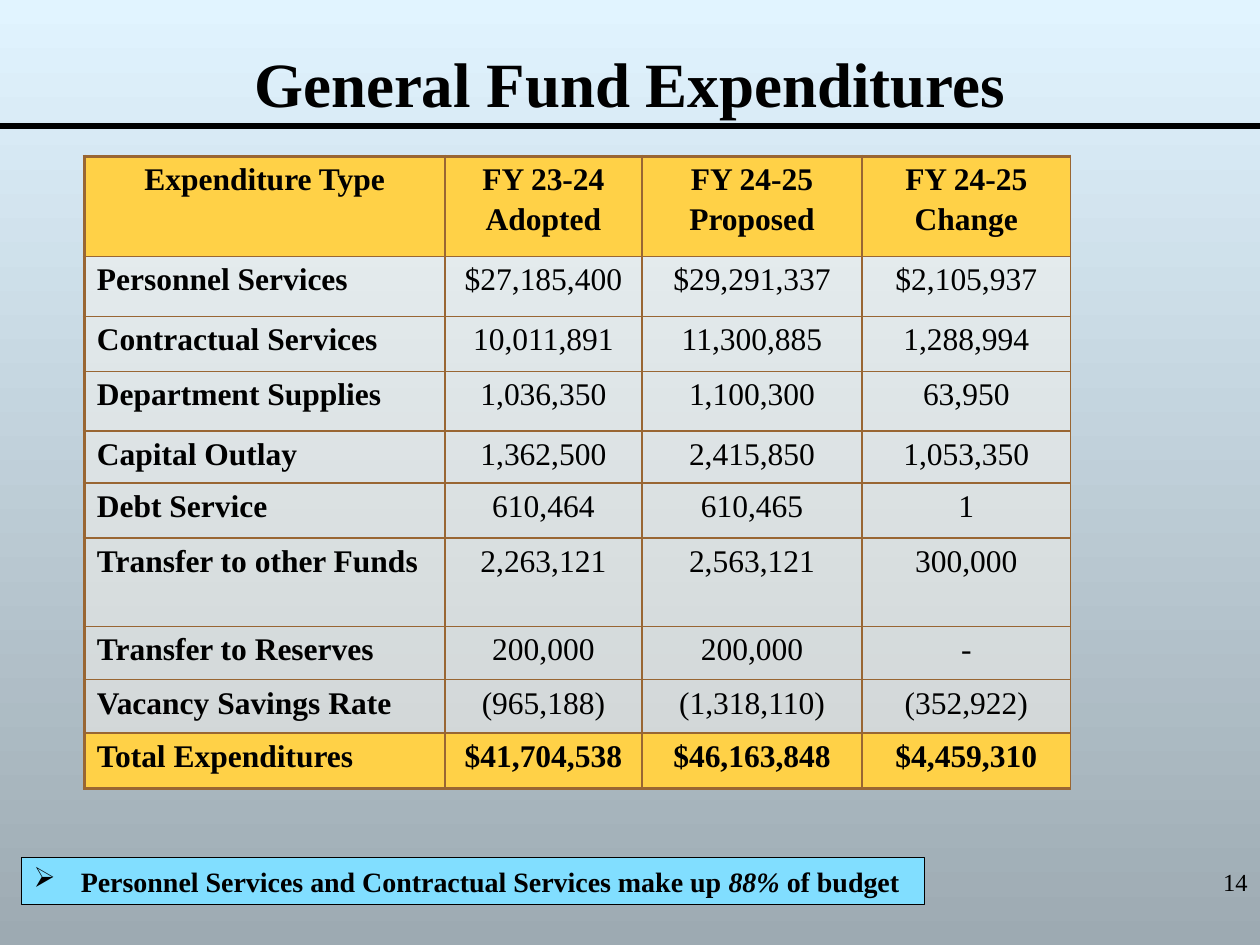
from lxml import etree
from pptx import Presentation
from pptx.dml.color import RGBColor
from pptx.enum import shapes, text
from pptx.oxml import ns
from pptx.util import Cm, Pt

# Content
TITLE = "General Fund Expenditures"
ROWS = [
    ("Expenditure Type", "FY 23-24\nAdopted", "FY 24-25\nProposed", "FY 24-25\nChange"),
    ("Personnel Services", "$27,185,400", "$29,291,337", "$2,105,937"),
    ("Contractual Services", "10,011,891", "11,300,885", "1,288,994"),
    ("Department Supplies", "1,036,350", "1,100,300", "63,950"),
    ("Capital Outlay", "1,362,500", "2,415,850", "1,053,350"),
    ("Debt Service", "610,464", "610,465", "1"),
    ("Transfer to other Funds", "2,263,121", "2,563,121", "300,000"),
    ("Transfer to Reserves", "200,000", "200,000", "-"),
    ("Vacancy Savings Rate", "(965,188)", "(1,318,110)", "(352,922)"),
    ("Total Expenditures", "$41,704,538", "$46,163,848", "$4,459,310"),
]
NOTE = [  # text, italic
    ("Personnel Services and Contractual Services make up ", False),
    ("88% ", True),
    ("of budget", False),
]
PAGE = "14"

# Layout in centimetres
COL_WIDTHS = [7.27, 3.97, 4.44, 4.2]
ROW_HEIGHTS = [2.02, 1.21, 1.11, 1.2, 1.05, 1.11, 1.78, 1.07, 1.08, 1.12]
RULE_Y = 2.54

FONT = "Times New Roman"
BLACK = RGBColor(0x00, 0x00, 0x00)
SKY = RGBColor(0xE1, 0xF4, 0xFF)
SLATE = RGBColor(0x9D, 0xAA, 0xB2)
GOLD = RGBColor(0xFF, 0xD1, 0x47)
CREAM = RGBColor(0xF9, 0xF5, 0xEF)
BROWN = RGBColor(0x99, 0x66, 0x33)
AQUA = RGBColor(0x81, 0xDE, 0xFF)


def format_run(r, size, bold=False, italic=False):
    r.font.name = FONT
    r.font.size = Pt(size)
    r.font.bold = bold
    r.font.italic = italic
    r.font.color.rgb = BLACK


def add_borders(cell, widths):
    """Put left, right, top and bottom lines, in that order, before the fill."""
    tc_pr = cell._tc.get_or_add_tcPr()
    for i, (side, width) in enumerate(zip(("lnL", "lnR", "lnT", "lnB"), widths)):
        ln = etree.Element(ns.qn("a:" + side), w=str(Pt(width)))
        fill = etree.SubElement(ln, ns.qn("a:solidFill"))
        etree.SubElement(fill, ns.qn("a:srgbClr"), val=str(BROWN))
        tc_pr.insert(i, ln)


def fill_cell(cell, value, row, col):
    last = len(ROWS) - 1
    accent = row in (0, last)
    cell.fill.solid()
    cell.fill.fore_color.rgb = GOLD if accent else CREAM
    if not accent:
        clr = cell._tc.tcPr.find(".//" + ns.qn("a:srgbClr"))
        etree.SubElement(clr, ns.qn("a:alpha"), val="50000")
    add_borders(cell, (2.25 if col == 0 else 1, 1,
                       2.25 if row == 0 else 1, 2.25 if row == last else 1))
    cell.text_frame.text = value
    for i, p in enumerate(cell.text_frame.paragraphs):
        left = col == 0 and row > 0
        p.alignment = text.PP_ALIGN.LEFT if left else text.PP_ALIGN.CENTER
        p.space_before = Pt(3 if i else 0)
        format_run(p.runs[0], 18, bold=accent or col == 0)


prs = Presentation()
prs.slide_width, prs.slide_height = Cm(25.4), Cm(19.05)
s = prs.slides.add_slide(prs.slide_layouts[5])

# Background, light at the top
bg = s.background.fill
bg.gradient()
bg.gradient_angle = 270
for stop, color in zip(bg.gradient_stops, (SKY, SLATE)):
    stop.color.rgb = color

# Title
title = s.shapes.title
title.left, title.top, title.width, title.height = Cm(0), Cm(0.43), Cm(25.4), Cm(2.11)
tf = title.text_frame
tf.text = TITLE
tf.auto_size = text.MSO_AUTO_SIZE.NONE
tf.vertical_anchor = text.MSO_ANCHOR.BOTTOM
p = tf.paragraphs[0]
p.alignment = text.PP_ALIGN.CENTER
format_run(p.runs[0], 36, bold=True)

# Expenditure table
table = s.shapes.add_table(len(ROWS), len(COL_WIDTHS), Cm(1.7), Cm(3.15),
                           Cm(sum(COL_WIDTHS)), Cm(sum(ROW_HEIGHTS))).table
for column, width in zip(table.columns, COL_WIDTHS):
    column.width = Cm(width)
for row, (values, height) in enumerate(zip(ROWS, ROW_HEIGHTS)):
    table.rows[row].height = Cm(height)
    for col, value in enumerate(values):
        fill_cell(table.cell(row, col), value, row, col)

# Page number
page = s.shapes.add_textbox(Cm(19.48), Cm(17.35), Cm(5.92), Cm(1.32))
tf = page.text_frame
tf.word_wrap = True
tf.text = PAGE
p = tf.paragraphs[0]
p.alignment = text.PP_ALIGN.RIGHT
format_run(p.runs[0], 14)

# Rule under the title
rule = s.shapes.add_connector(shapes.MSO_CONNECTOR.STRAIGHT,
                              Cm(0), Cm(RULE_Y), prs.slide_width, Cm(RULE_Y))
rule.line.color.rgb = BLACK
rule.line.width = Pt(3)
etree.SubElement(rule._element.spPr, ns.qn("a:effectLst"))

# Bulleted note
note = s.shapes.add_shape(shapes.MSO_SHAPE.RECTANGLE,
                          Cm(0.43), Cm(17.29), Cm(18.21), Cm(0.94))
note.shadow.inherit = False
note.fill.solid()
note.fill.fore_color.rgb = AQUA
note.line.color.rgb = BLACK
note.line.width = Pt(0.75)
tf = note.text_frame
tf.word_wrap = True
tf.auto_size = text.MSO_AUTO_SIZE.SHAPE_TO_FIT_TEXT
p = tf.paragraphs[0]
p.alignment = text.PP_ALIGN.LEFT
p_pr = p._p.get_or_add_pPr()
p_pr.set("marL", str(Cm(0.95)))
p_pr.set("indent", str(-Cm(0.95)))
etree.SubElement(p_pr, ns.qn("a:buFont"), typeface="Wingdings 3")
etree.SubElement(p_pr, ns.qn("a:buChar"), char="➢")
p_pr.remove(p_pr.find(ns.qn("a:buFont")))
for words, italic in NOTE:
    r = p.add_run()
    r.text = words
    format_run(r, 16, bold=True, italic=italic)

prs.save("out.pptx")
